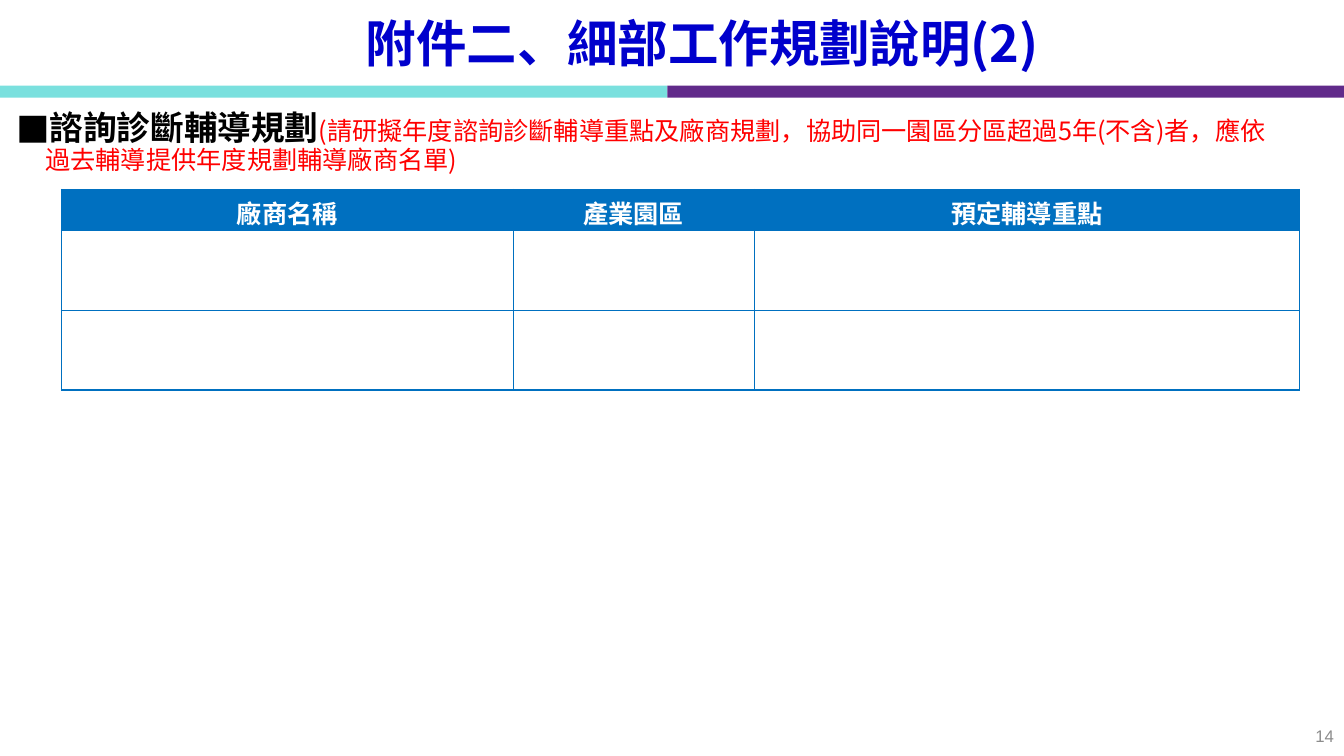
from dataclasses import dataclass

from lxml import etree
from pptx import Presentation
from pptx.dml.color import RGBColor
from pptx.enum import shapes, text
from pptx.oxml import ns
from pptx.util import Inches, Pt


@dataclass(frozen=True)
class Theme:
    font: str = "Noto Sans CJK SC"
    number_font: str = "Arial"
    title_color: str = "0000CC"
    text_color: str = "000000"
    note_color: str = "FF0000"
    table_color: str = "0070C0"
    header_color: str = "FFFFFF"
    number_color: str = "8C8C8C"
    left_bar: str = "7AE0DE"
    right_bar: str = "612A8A"
    title_size: int = 36
    heading_size: int = 24
    body_size: int = 18
    number_size: int = 12
    border_width: float = 1


class SlideBuilder:
    def __init__(self, presentation, theme):
        self.theme = theme
        self.slide = presentation.slides.add_slide(presentation.slide_layouts[1])

    def place(self, shape, left, top, width, height):
        shape.left, shape.top = Inches(left), Inches(top)
        shape.width, shape.height = Inches(width), Inches(height)

    def add_run(self, paragraph, words, size, color, bold=False, font=None):
        run = paragraph.add_run()
        run.text = words
        run.font.size = Pt(size)
        run.font.bold = bold
        run.font.name = font or self.theme.font
        run.font.color.rgb = RGBColor.from_string(color)
        east_asian = etree.Element(ns.qn("a:ea"), typeface=self.theme.font)
        run.font._element.find(ns.qn("a:latin")).addnext(east_asian)

    def indent(self, paragraph, margin, first_line):
        properties = paragraph._p.get_or_add_pPr()
        properties.set("marL", str(Inches(margin)))
        properties.set("indent", str(Inches(first_line)))
        return properties

    def add_bar(self, left, top, width, height, color):
        bar = self.slide.shapes.add_shape(
            shapes.MSO_SHAPE.RECTANGLE,
            Inches(left), Inches(top), Inches(width), Inches(height))
        bar.shadow.inherit = False
        bar.fill.solid()
        bar.fill.fore_color.rgb = RGBColor.from_string(color)
        bar.line.fill.background()

    def add_title(self, words, *box):
        title = self.slide.shapes.title
        self.place(title, *box)
        frame = title.text_frame
        frame.auto_size = text.MSO_AUTO_SIZE.NONE
        frame.vertical_anchor = text.MSO_ANCHOR.MIDDLE
        paragraph = frame.paragraphs[0]
        self.indent(paragraph, 0.59, 0)
        paragraph.alignment = text.PP_ALIGN.CENTER
        self.add_run(paragraph, words, self.theme.title_size,
                     self.theme.title_color, bold=True)

    def add_bullet(self, heading, note, *box):
        body = self.slide.placeholders[1]
        self.place(body, *box)
        frame = body.text_frame
        frame.auto_size = text.MSO_AUTO_SIZE.NONE
        frame.vertical_anchor = text.MSO_ANCHOR.TOP
        paragraph = frame.paragraphs[0]
        properties = self.indent(paragraph, 0.29, -0.29)
        etree.SubElement(properties, ns.qn("a:buFont"), typeface=self.theme.font)
        etree.SubElement(properties, ns.qn("a:buChar"), char="■")
        paragraph.space_before = Pt(0)
        paragraph.line_spacing = 0.9
        self.add_run(paragraph, heading, self.theme.heading_size,
                     self.theme.text_color, bold=True)
        self.add_run(paragraph, note, self.theme.body_size, self.theme.note_color)

    def add_borders(self, cell):
        properties = cell._tc.get_or_add_tcPr()
        for position, side in enumerate(("lnL", "lnR", "lnT", "lnB")):
            line = etree.Element(ns.qn(f"a:{side}"),
                                 w=str(Pt(self.theme.border_width)))
            fill = etree.SubElement(line, ns.qn("a:solidFill"))
            etree.SubElement(fill, ns.qn("a:srgbClr"), val=self.theme.table_color)
            properties.insert(position, line)

    def add_table(self, headers, column_widths, row_heights, left, top):
        table = self.slide.shapes.add_table(
            len(row_heights), len(column_widths), Inches(left), Inches(top),
            Inches(sum(column_widths)), Inches(sum(row_heights))).table
        for column, width in zip(table.columns, column_widths):
            column.width = Inches(width)
        for row, height in zip(table.rows, row_heights):
            row.height = Inches(height)
        for cell in table.iter_cells():
            cell.fill.background()
            self.add_borders(cell)
        for cell, header in zip(table.rows[0].cells, headers):
            cell.fill.solid()
            cell.fill.fore_color.rgb = RGBColor.from_string(self.theme.table_color)
            cell.vertical_anchor = text.MSO_ANCHOR.MIDDLE
            cell.margin_top, cell.margin_bottom = Inches(0.04), 0
            paragraph = cell.text_frame.paragraphs[0]
            paragraph.alignment = text.PP_ALIGN.CENTER
            self.add_run(paragraph, header, self.theme.body_size,
                         self.theme.header_color, bold=True)

    def add_page_number(self, number, left, top, width, height):
        box = self.slide.shapes.add_textbox(
            Inches(left), Inches(top), Inches(width), Inches(height))
        frame = box.text_frame
        frame.word_wrap = True
        frame.vertical_anchor = text.MSO_ANCHOR.MIDDLE
        paragraph = frame.paragraphs[0]
        paragraph.alignment = text.PP_ALIGN.RIGHT
        self.add_run(paragraph, number, self.theme.number_size,
                     self.theme.number_color, font=self.theme.number_font)


def main():
    presentation = Presentation()
    presentation.slide_width = Inches(13.33)
    presentation.slide_height = Inches(7.5)
    theme = Theme()
    builder = SlideBuilder(presentation, theme)
    builder.add_bar(0, 0.85, 6.62, 0.12, theme.left_bar)
    builder.add_bar(6.62, 0.85, 6.71, 0.12, theme.right_bar)
    builder.add_title("附件二、細部工作規劃說明(2)", 1.67, 0.08, 10, 0.68)
    builder.add_bullet(
        "諮詢診斷輔導規劃",
        "(請研擬年度諮詢診斷輔導重點及廠商規劃，協助同一園區分區超過5年(不含)者，"
        "應依過去輔導提供年度規劃輔導廠商名單)",
        0.06, 1.06, 12.82, 0.81)
    builder.add_table(("廠商名稱", "產業園區", "預定輔導重點"),
                      (4.48, 2.39, 5.41), (0.41, 0.79, 0.79), 0.61, 1.88)
    builder.add_page_number("14", 11, 7.1, 2.33, 0.4)
    presentation.save("out.pptx")


if __name__ == "__main__":
    main()
